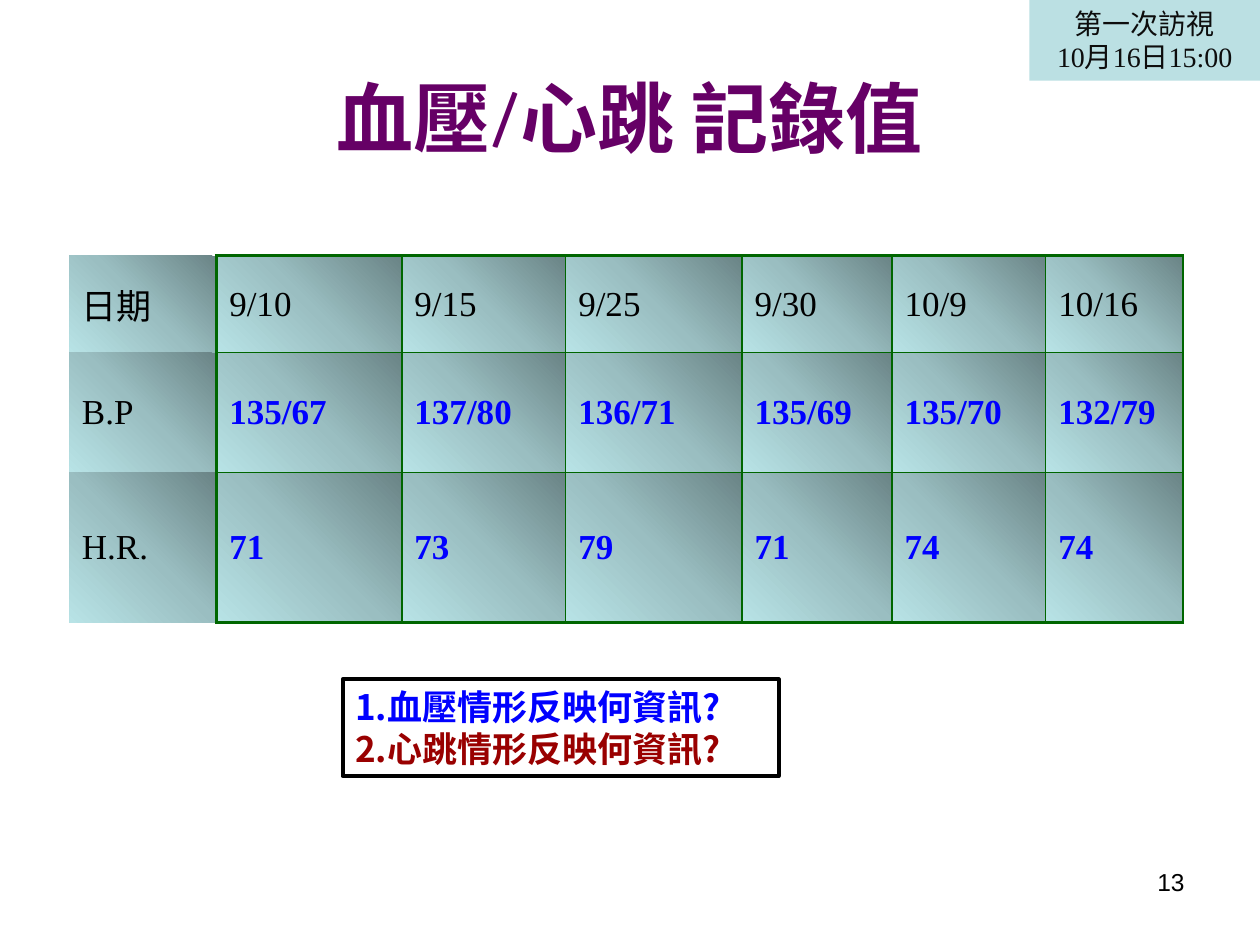
from lxml.etree import SubElement
from pptx import Presentation
from pptx.dml.color import RGBColor
from pptx.enum.shapes import MSO_SHAPE
from pptx.enum.text import MSO_ANCHOR, MSO_AUTO_SIZE, PP_ALIGN
from pptx.oxml.ns import qn
from pptx.util import Inches, Pt

SERIF, SANS_CJK = "Times New Roman", "Noto Sans CJK SC"
BLACK, BLUE, RED, GREEN = "000000", "0000FF", "990000", "006600"
PURPLE, PALE_TEAL, NEAR_BLACK = "660066", "BBE0E3", "0D0D0D"
CELL_GRADIENT = [(0, "6A8486"), (50, "9ABEC1"), (100, "B8E3E6")]
THIN, THICK = 1, 2.25

COLUMN_WIDTHS = [11.7, 14.7, 13, 14, 11.9, 12.2, 10.9]
ROW_HEIGHTS = [7.7, 9.5, 11.9]
READINGS = [
    ["日期", "9/10", "9/15", "9/25", "9/30", "10/9", "10/16"],
    ["B.P", "135/67", "137/80", "136/71", "135/69", "135/70", "132/79"],
    ["H.R.", "71", "73", "79", "71", "74", "74"],
]


def color(hex_value):
    return RGBColor.from_string(hex_value)


def add_solid(parent, hex_value):
    solid = SubElement(parent, qn("a:solidFill"))
    SubElement(solid, qn("a:srgbClr"), val=hex_value)


class VisitSlide:
    """A slide measured on a grid of 100 columns by 75 rows."""

    def __init__(self, presentation):
        self.unit_x = presentation.slide_width / 100
        self.unit_y = presentation.slide_height / 75
        self.slide = presentation.slides.add_slide(presentation.slide_layouts[5])
        self.shapes = self.slide.shapes

    def area(self, left, top, width, height):
        return (round(left * self.unit_x), round(top * self.unit_y),
                round(width * self.unit_x), round(height * self.unit_y))

    def set_lines(self, frame, lines, size, font, align=PP_ALIGN.LEFT, bold=False):
        for index, (line, hex_value) in enumerate(lines):
            paragraph = frame.paragraphs[0] if index == 0 else frame.add_paragraph()
            paragraph.text = line
            paragraph.alignment = align
            paragraph.font.size = Pt(size)
            paragraph.font.name = font
            paragraph.font.bold = bold
            paragraph.font.color.rgb = color(hex_value)

    def title(self, text, grid_area):
        heading = self.shapes.title
        heading.left, heading.top, heading.width, heading.height = self.area(*grid_area)
        heading.text_frame.vertical_anchor = MSO_ANCHOR.MIDDLE
        self.set_lines(heading.text_frame, [(text, PURPLE)], 44, "Vollkorn",
                       PP_ALIGN.CENTER, bold=True)

    def label(self, text, grid_area):
        frame = self.shapes.add_textbox(*self.area(*grid_area)).text_frame
        frame.word_wrap = True
        self.set_lines(frame, [(text, BLACK)], 14, "Arial", PP_ALIGN.RIGHT)

    def box(self, lines, grid_area, size, font, fill=None, line=None,
            wrap=True, **text_style):
        panel = self.shapes.add_shape(MSO_SHAPE.RECTANGLE, *self.area(*grid_area))
        panel.shadow.inherit = False
        if fill:
            panel.fill.solid()
            panel.fill.fore_color.rgb = color(fill)
        else:
            panel.fill.background()
        if line:
            panel.line.color.rgb = color(line)
            panel.line.width = Pt(THICK)
        else:
            panel.line.fill.background()
        frame = panel.text_frame
        frame.word_wrap = wrap
        frame.vertical_anchor = MSO_ANCHOR.TOP
        frame.auto_size = MSO_AUTO_SIZE.SHAPE_TO_FIT_TEXT
        self.set_lines(frame, lines, size, font, **text_style)

    def cell_look(self, cell, borders):
        properties = cell._tc.get_or_add_tcPr()
        for side in ("L", "R", "T", "B"):
            width = borders.get(side, 0)
            edge = SubElement(properties, qn(f"a:ln{side}"), w=str(Pt(width)))
            if width:
                add_solid(edge, GREEN)
            else:
                SubElement(edge, qn("a:noFill"))
        gradient = SubElement(properties, qn("a:gradFill"), rotWithShape="1")
        stops = SubElement(gradient, qn("a:gsLst"))
        for percent, hex_value in CELL_GRADIENT:
            stop = SubElement(stops, qn("a:gs"), pos=str(percent * 1000))
            SubElement(stop, qn("a:srgbClr"), val=hex_value)
        SubElement(gradient, qn("a:lin"), ang=str(135 * 60000), scaled="0")

    def readings_table(self, left, top):
        last_row = len(READINGS) - 1
        grid_area = self.area(left, top, sum(COLUMN_WIDTHS), sum(ROW_HEIGHTS))
        table = self.shapes.add_table(len(READINGS), len(COLUMN_WIDTHS), *grid_area).table
        table.first_row = table.horz_banding = False
        for column, width in zip(table.columns, COLUMN_WIDTHS):
            column.width = round(width * self.unit_x)
        for row, height in zip(table.rows, ROW_HEIGHTS):
            row.height = round(height * self.unit_y)
        for r, values in enumerate(READINGS):
            for c, value in enumerate(values):
                cell = table.cell(r, c)
                cell.vertical_anchor = MSO_ANCHOR.MIDDLE
                measured = r > 0 and c > 0
                self.set_lines(cell.text_frame, [(value, BLUE if measured else BLACK)], 20,
                               SANS_CJK if r == c == 0 else SERIF, bold=measured)
                cell.text_frame.paragraphs[0].space_before = Pt(4)
                # Row names stand outside the green frame
                borders = {"R": THICK} if c == 0 else {
                    "L": THICK if c == 1 else THIN,
                    "R": THIN,
                    "T": THICK if r == 0 else THIN,
                    "B": THICK if r == last_row else THIN,
                }
                self.cell_look(cell, borders)


def main():
    presentation = Presentation()
    presentation.slide_width, presentation.slide_height = Inches(10), Inches(7.5)
    visit = VisitSlide(presentation)

    # Heading and page number
    visit.title("血壓/心跳 記錄值", (5, 3, 90, 12.5))
    visit.label("13", (71.7, 68.3, 23.3, 5.2))

    # Visit date in the corner
    visit.box([("第一次訪視", NEAR_BLACK), ("10月16日15:00", NEAR_BLACK)],
              (81.7, 0, 18.3, 6.4), 16, SERIF, fill=PALE_TEAL, wrap=False,
              align=PP_ALIGN.CENTER)

    # Blood pressure and heart rate
    visit.readings_table(5.5, 20.3)

    # Questions for discussion
    visit.box([("1.血壓情形反映何資訊?", BLUE), ("2.心跳情形反映何資訊?", RED)],
              (27.2, 53.9, 34.6, 7.7), 20, SANS_CJK, line=BLACK, bold=True)

    presentation.save("out.pptx")


if __name__ == "__main__":
    main()
